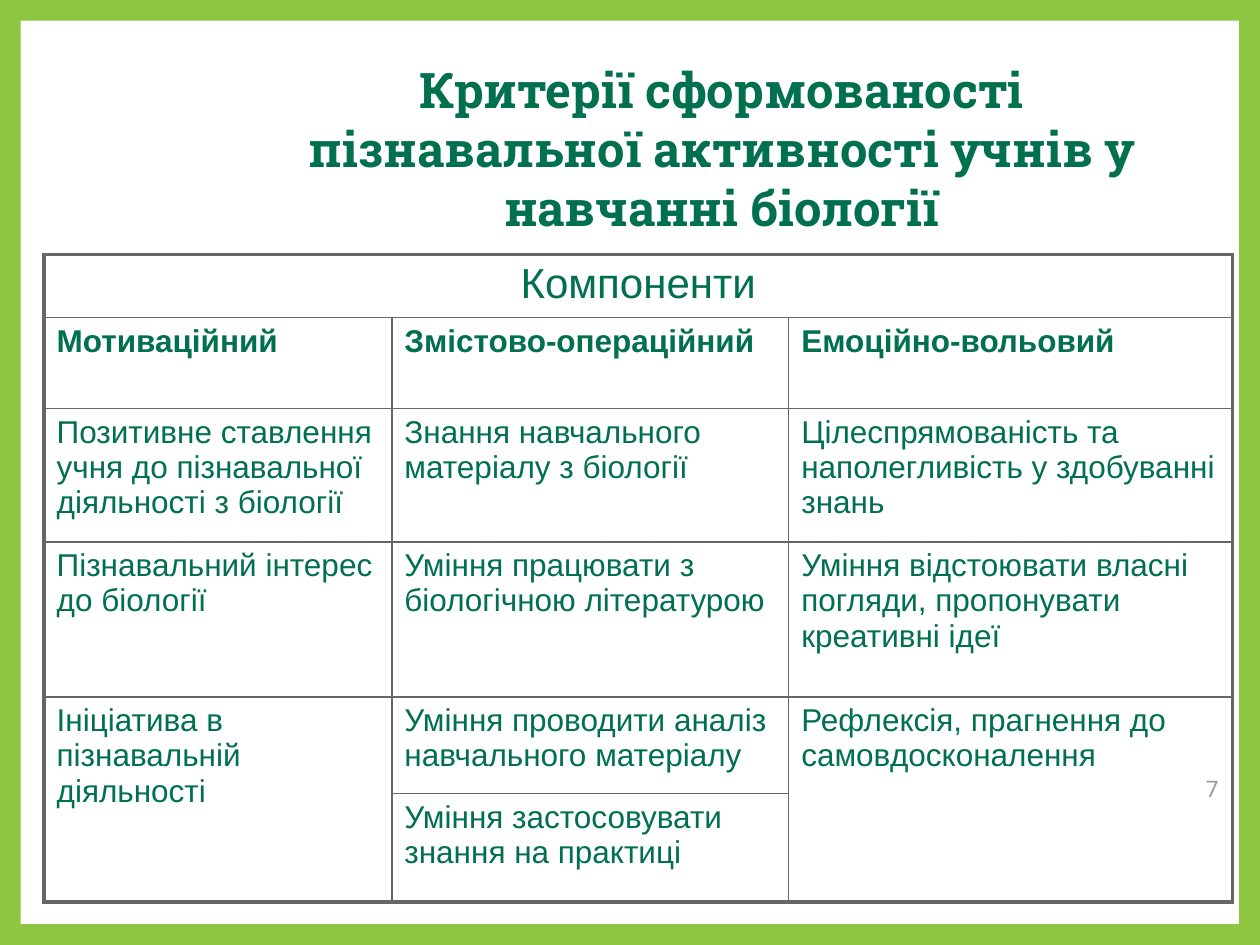
from dataclasses import dataclass
from lxml import etree
from pptx import Presentation
from pptx.dml.color import RGBColor
from pptx.enum.shapes import MSO_SHAPE
from pptx.enum.text import MSO_ANCHOR, PP_ALIGN
from pptx.oxml.ns import qn
from pptx.util import Inches, Pt

FRAME = MSO_SHAPE.FRAME
TOP, BOTTOM = MSO_ANCHOR.TOP, MSO_ANCHOR.BOTTOM
LEFT, CENTER, RIGHT = PP_ALIGN.LEFT, PP_ALIGN.CENTER, PP_ALIGN.RIGHT
WIDTH, HEIGHT = 10, 7.5
GREEN, LIME, GRAY, PALE = "00704F", "8EC641", "666666", "999999"
THIN, THICK = 1, 2.25
COLS = (2.76, 3.15, 3.52)
ROWS = (0.47, 0.72, 1.06, 1.23, 0.77, 0.86)


@dataclass
class Style:
    size: float
    font: str
    color: str
    bold: bool = False
    align: PP_ALIGN = LEFT


@dataclass
class Label:
    text: str
    box: tuple[float, float, float, float]
    style: Style
    anchor: MSO_ANCHOR = TOP


LABELS = (
    Label("7", (0.927, 0.807, 0.05, 0.057), Style(13, "Roboto", PALE, align=RIGHT)),
    Label("Критерії сформованості пізнавальної активності учнів у навчанні біології",
          (0.209, 0.048, 0.727, 0.215), Style(28, "Roboto Slab", GREEN, True, CENTER), BOTTOM),
)
HEADING = Style(24, "Arial", GREEN, align=CENTER)
SUBHEADING = Style(18, "Arial", GREEN, True)
BODY = Style(18, "Arial", GREEN)
TEXTS = (
    ("Компоненти", "", ""),
    ("Мотиваційний", "Змістово-операційний", "Емоційно-вольовий"),
    ("Позитивне ставлення учня до пізнавальної діяльності з біології",
     "Знання навчального матеріалу з біології",
     "Цілеспрямованість та наполегливість у здобуванні знань"),
    ("Пізнавальний інтерес до біології",
     "Уміння працювати з біологічною літературою",
     "Уміння відстоювати власні погляди, пропонувати креативні ідеї"),
    ("Ініціатива в пізнавальній діяльності",
     "Уміння проводити аналіз навчального матеріалу",
     "Рефлексія, прагнення до самовдосконалення"),
    ("", "Уміння застосовувати знання на практиці", ""),
)
MERGES = (((0, 0), (0, 2)), ((4, 0), (5, 0)), ((4, 2), (5, 2)))


def rgb(color: str) -> RGBColor:
    """Turn a hex string into a colour."""
    return RGBColor.from_string(color)


def write(tf, text: str, style: Style) -> None:
    """Put one styled paragraph into a text frame."""
    p = tf.paragraphs[0]
    p.text = text
    p.alignment = style.align
    p.font.size = Pt(style.size)
    p.font.name = style.font
    p.font.bold = style.bold
    p.font.color.rgb = rgb(style.color)


def add_frame(slide) -> None:
    """Draw the border around the slide."""
    sp = slide.shapes.add_shape(FRAME, 0, 0, Inches(WIDTH), Inches(HEIGHT))
    sp.adjustments[0] = 0.022
    sp.shadow.inherit = False
    sp.fill.solid()
    sp.fill.fore_color.rgb = rgb(LIME)
    sp.line.fill.background()


def add_label(slide, label: Label) -> None:
    """Add a text box placed by shares of the slide."""
    x, y, w, h = label.box
    sp = slide.shapes.add_textbox(Inches(x * WIDTH), Inches(y * HEIGHT),
                                  Inches(w * WIDTH), Inches(h * HEIGHT))
    tf = sp.text_frame
    tf.word_wrap = True
    tf.vertical_anchor = label.anchor
    tf.margin_left = tf.margin_right = tf.margin_top = tf.margin_bottom = Inches(0.1)
    write(tf, label.text, label.style)


def set_borders(cell, row: int, col: int) -> None:
    """Give a cell thick lines on the table's edge and thin ones inside."""
    outer = {
        "L": col == 0,
        "R": col + cell.span_width == len(COLS),
        "T": row == 0,
        "B": row + cell.span_height == len(ROWS),
    }
    tcPr = cell._tc.get_or_add_tcPr()
    for side, thick in outer.items():
        if cell.is_spanned and not thick:
            continue
        ln = etree.SubElement(tcPr, qn(f"a:ln{side}"), w=str(Pt(THICK if thick else THIN)))
        fill = etree.SubElement(ln, qn("a:solidFill"))
        etree.SubElement(fill, qn("a:srgbClr"), val=GRAY)


def add_criteria(slide) -> None:
    """Add the table of components and criteria."""
    table = slide.shapes.add_table(len(ROWS), len(COLS), Inches(0.35), Inches(2.02),
                                   Inches(sum(COLS)), Inches(sum(ROWS))).table
    table.first_row = table.horz_banding = False
    for column, width in zip(table.columns, COLS):
        column.width = Inches(width)
    for line, height in zip(table.rows, ROWS):
        line.height = Inches(height)
    for start, end in MERGES:
        table.cell(*start).merge(table.cell(*end))
    styles = {0: HEADING, 1: SUBHEADING}
    for row, texts in enumerate(TEXTS):
        for col, text in enumerate(texts):
            cell = table.cell(row, col)
            set_borders(cell, row, col)
            cell.fill.background()
            write(cell.text_frame, text, styles.get(row, BODY))


def main() -> None:
    """Build the slide and save it."""
    prs = Presentation()
    prs.slide_width, prs.slide_height = Inches(WIDTH), Inches(HEIGHT)
    slide = prs.slides.add_slide(prs.slide_layouts[6])
    add_frame(slide)
    for label in LABELS:
        add_label(slide, label)
    add_criteria(slide)
    prs.save("out.pptx")


if __name__ == "__main__":
    main()
